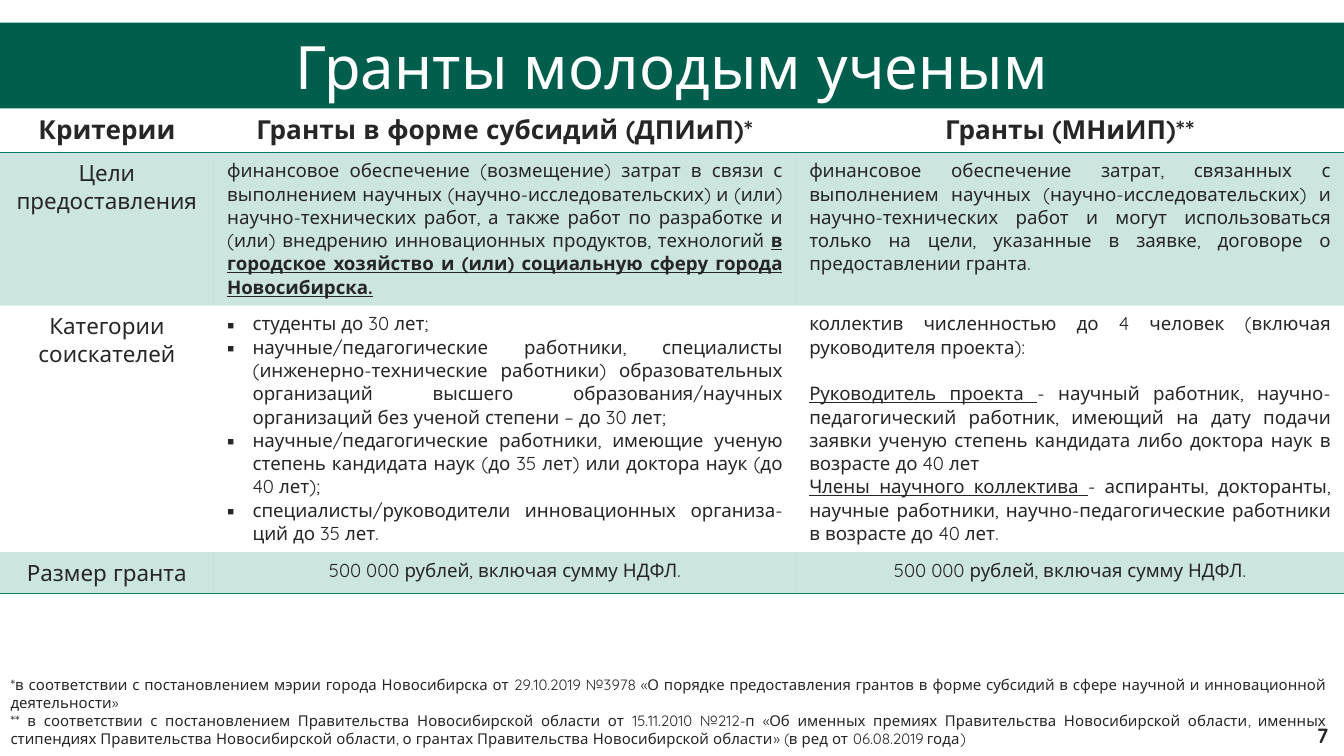
from typing import NamedTuple

from lxml.etree import SubElement
from pptx import Presentation
from pptx.dml.color import RGBColor
from pptx.enum.shapes import MSO_SHAPE as Kind
from pptx.enum.text import MSO_AUTO_SIZE as Fit, PP_ALIGN as Align
from pptx.oxml import parse_xml
from pptx.oxml.ns import nsdecls, qn
from pptx.util import Cm, Pt

FONT = "Quicksand"
INK, WHITE, DARK, GREEN = "262626", "FFFFFF", "005E4C", "007E66"
PLAIN = "{2D5ABB26-0587-4C30-8999-92F81FD0307C}"


class Span(NamedTuple):
    text: str
    bold: bool = False
    under: bool = False


class Para(NamedTuple):
    spans: tuple[Span, ...]
    size: float = 10
    align: Align = Align.JUSTIFY
    bullet: bool = False
    gap: float = 0
    ink: str = INK


class Row(NamedTuple):
    high: float
    cells: tuple[list[Para], ...]
    tint: bool = False
    lines: str = ""


class Box(NamedTuple):
    left: float
    top: float
    width: float
    height: float


def color(code: str) -> RGBColor:
    return RGBColor.from_string(code)


def label(text: str, size: float, bold: bool = False, ink: str = INK) -> list[Para]:
    return [Para((Span(text, bold),), size, Align.CENTER, ink=ink)]


def body(*spans: Span, gap: float = 0) -> Para:
    return Para(spans, gap=gap)


def items(*texts: str) -> list[Para]:
    return [Para((Span(text),), bullet=True) for text in texts]


def write(frame, paras: list[Para]) -> None:
    frame.text = "\n".join(para.spans[0].text for para in paras)
    for line, para in zip(frame.paragraphs, paras):
        line.alignment = para.align
        if para.gap:
            line.space_before = Pt(para.gap)
        for span in para.spans[1:]:
            line.add_run().text = span.text
        for run, span in zip(line.runs, para.spans):
            font = run.font
            font.name, font.size = FONT, Pt(para.size)
            font.bold, font.underline = span.bold, span.under
            font.color.rgb = color(para.ink)
        if para.bullet:
            props = line._p.get_or_add_pPr()
            props.set("marL", str(Cm(0.48)))
            props.set("indent", str(-Cm(0.48)))
            SubElement(props, qn("a:buFont"), typeface="Noto Sans")
            SubElement(props, qn("a:buChar"), char="▪")


def style(cell, row: Row) -> None:
    props = cell._tc.get_or_add_tcPr()
    for side in row.lines:
        props.append(parse_xml(
            f'<a:ln{side} {nsdecls("a")} w="{Pt(1)}"><a:solidFill>'
            f'<a:srgbClr val="{GREEN}"/></a:solidFill></a:ln{side}>'))
    if row.tint:
        cell.fill.solid()
        cell.fill.fore_color.rgb = color(GREEN)
        SubElement(props.find(qn("a:solidFill"))[0], qn("a:alpha"), val="20000")
    else:
        cell.fill.background()


def draw_table(slide, box: Box, widths: tuple[float, ...], rows: list[Row]) -> None:
    table = slide.shapes.add_table(len(rows), len(widths), *map(Cm, box)).table
    table.first_row = table.horz_banding = False
    table._tbl.tblPr.find(qn("a:tableStyleId")).text = PLAIN
    for col, width in zip(table.columns, widths):
        col.width = Cm(width)
    for line, row in zip(table.rows, rows):
        line.height = Cm(row.high)
        for cell, paras in zip(line.cells, row.cells):
            write(cell.text_frame, paras)
            style(cell, row)


def draw_band(slide, box: Box, paras: list[Para]) -> None:
    band = slide.shapes.add_shape(Kind.RECTANGLE, *map(Cm, box))
    band.shadow.inherit = False
    band.fill.solid()
    band.fill.fore_color.rgb = color(DARK)
    band.line.fill.background()
    write(band.text_frame, paras)
    band.text_frame.auto_size = Fit.SHAPE_TO_FIT_TEXT


def draw_text(slide, box: Box, paras: list[Para], wrap: bool = True) -> None:
    frame = slide.shapes.add_textbox(*map(Cm, box)).text_frame
    frame.word_wrap = wrap
    frame.auto_size = Fit.SHAPE_TO_FIT_TEXT
    write(frame, paras)


HEAD = ("Критерии", "Гранты в форме субсидий (ДПИиП)*", "Гранты (МНиИП)**")
SUM = "500 000 рублей, включая сумму НДФЛ."

GOALS = [body(
    Span("финансовое обеспечение (возмещение) затрат в связи с выполнением научных "
         "(научно-исследовательских) и (или) научно-технических работ, а также работ "
         "по разработке и (или) внедрению инновационных продуктов, технологий "),
    Span("в городское хозяйство и (или) социальную сферу города Новосибирска.", True, True))]
AIMS = [body(Span(
    "финансовое обеспечение затрат, связанных с выполнением научных "
    "(научно-исследовательских) и научно-технических работ и могут использоваться "
    "только на цели, указанные в заявке, договоре о предоставлении гранта."))]
PEOPLE = items(
    "студенты до 30 лет;",
    "научные/педагогические работники, специалисты (инженерно-технические работники) "
    "образовательных организаций высшего образования/научных организаций без ученой "
    "степени – до 30 лет;",
    "научные/педагогические работники, имеющие ученую степень кандидата наук "
    "(до 35 лет) или доктора наук (до 40 лет);",
    "специалисты/руководители инновационных организа-ций до 35 лет.")
TEAM = [
    body(Span("коллектив численностью до 4 человек (включая руководителя проекта):")),
    body(Span("Руководитель проекта ", under=True),
         Span("- научный работник, научно-педагогический работник, имеющий на дату "
              "подачи заявки ученую степень кандидата либо доктора наук в возрасте "
              "до 40 лет"), gap=12.5),
    body(Span("Члены научного коллектива ", under=True),
         Span("- аспиранты, докторанты, научные работники, научно-педагогические "
              "работники в возрасте до 40 лет."))]
ROWS = [
    Row(0.79, tuple(label(text, 14, True) for text in HEAD), lines="TB"),
    Row(1.5, (label("Цели предоставления", 12), GOALS, AIMS), True),
    Row(1.5, (label("Категории соискателей", 12), PEOPLE, TEAM)),
    Row(0.71, (label("Размер гранта", 12), label(SUM, 10), label(SUM, 10)), True, "B")]
NOTES = [Para((Span(text),), 8) for text in (
    "*в соответствии с постановлением мэрии города Новосибирска от 29.10.2019 №3978 "
    "«О порядке предоставления грантов в форме субсидий в сфере научной и "
    "инновационной деятельности»",
    "** в соответствии с постановлением Правительства Новосибирской области от "
    "15.11.2010 №212-п «Об именных премиях Правительства Новосибирской области, "
    "именных стипендиях Правительства Новосибирской области, о грантах "
    "Правительства Новосибирской области» (в ред от 06.08.2019 года)")]


def main() -> None:
    deck = Presentation()
    deck.slide_width, deck.slide_height = Cm(25.4), Cm(14.29)
    slide = deck.slides.add_slide(deck.slide_layouts[6])
    draw_table(slide, Box(0, 2.01, 25.4, 8.89), (4.04, 11, 10.36), ROWS)
    draw_band(slide, Box(0, 0.43, 25.4, 1.62), label("Гранты молодым ученым", 32, ink=WHITE))
    draw_text(slide, Box(-0.05, 12.65, 25.4, 1.63), NOTES)
    page = [Para((Span("7", True),), 11, Align.LEFT)]
    draw_text(slide, Box(24.64, 13.55, 0.74, 0.74), page, wrap=False)
    deck.save("out.pptx")


if __name__ == "__main__":
    main()
